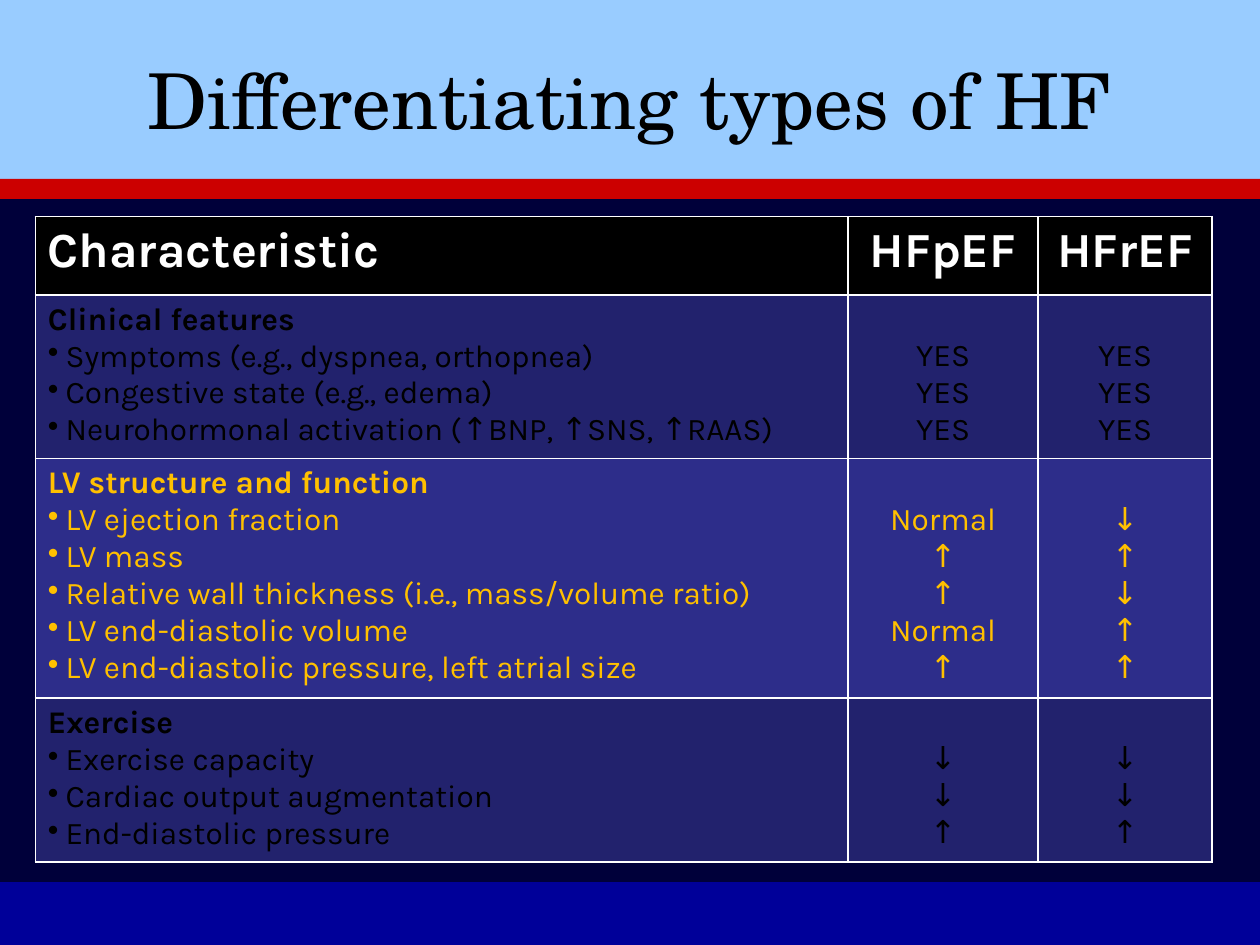
from typing import NamedTuple

from lxml.etree import SubElement
from pptx import Presentation
from pptx.dml.color import RGBColor
from pptx.enum.shapes import MSO_SHAPE as Shape
from pptx.enum.text import MSO_ANCHOR as Anchor, PP_ALIGN as Align
from pptx.oxml.ns import qn
from pptx.util import Inches, Pt

WIDTH, HEIGHT = 10, 7.5
BODY_FONT, TITLE_FONT = "Karla", "TeX Gyre Schola"
BLACK, WHITE, GOLD = "000000", "FFFFFF", "FFC000"
DARK, LIGHT = "22226D", "2D2D8A"
LINE_HEIGHT = 0.29  # one line of 18 pt body text
BULLET_INDENT = 0.14


class Band(NamedTuple):
    top: float
    bottom: float
    fill: str


class Section(NamedTuple):
    heading: str
    rows: list  # (feature, HFpEF, HFrEF)
    color: str
    fill: str
    height: float


BANDS = [
    Band(0, 1.42, "99CCFF"),
    Band(1.42, 1.58, "CC0000"),
    Band(1.58, 7, "00003A"),
]
HEADERS = ["Characteristic", "HFpEF", "HFrEF"]
HEADER_HEIGHT = 0.62
COLUMNS = [6.45, 1.51, 1.38]
SECTIONS = [
    Section("Clinical features", [
        ("Symptoms (e.g., dyspnea, orthopnea)", "YES", "YES"),
        ("Congestive state (e.g., edema)", "YES", "YES"),
        ("Neurohormonal activation (↑BNP, ↑SNS, ↑RAAS)", "YES", "YES"),
    ], BLACK, DARK, 1.3),
    Section("LV structure and function", [
        ("LV ejection fraction", "Normal", "↓"),
        ("LV mass", "↑", "↑"),
        ("Relative wall thickness (i.e., mass/volume ratio)", "↑", "↓"),
        ("LV end-diastolic volume", "Normal", "↑"),
        ("LV end-diastolic pressure, left atrial size", "↑", "↑"),
    ], GOLD, LIGHT, 1.9),
    Section("Exercise", [
        ("Exercise capacity", "↓", "↓"),
        ("Cardiac output augmentation", "↓", "↓"),
        ("End-diastolic pressure", "↑", "↑"),
    ], BLACK, DARK, 1.3),
]


def rgb(color: str) -> RGBColor:
    return RGBColor.from_string(color)


def write(p, text: str, color: str, align=Align.LEFT, **fmt) -> None:
    """Add one formatted run to a paragraph."""
    p.alignment = align
    r = p.add_run()
    r.text = text
    for name, value in fmt.items():
        setattr(r.font, name, value)
    r.font.color.rgb = rgb(color)


def add_bullet(p) -> None:
    pPr = p._p.get_or_add_pPr()
    pPr.set("marL", str(Inches(BULLET_INDENT)))
    pPr.set("indent", str(-Inches(BULLET_INDENT)))
    SubElement(pPr, qn("a:buChar"), char="•")


def style_cell(cell, fill: str) -> None:
    """Give a cell white borders and a solid fill."""
    tcPr = cell._tc.get_or_add_tcPr()
    for side in ("lnL", "lnR", "lnT", "lnB"):
        ln = SubElement(tcPr, qn(f"a:{side}"), w=str(Pt(1)))
        SubElement(SubElement(ln, qn("a:solidFill")), qn("a:srgbClr"), val=WHITE)
    cell.fill.solid()
    cell.fill.fore_color.rgb = rgb(fill)


def fill_cell(cell, lines: list, color: str, align, bullets: bool = False) -> None:
    """Write body lines; with bullets, the first line is a bold heading."""
    tf = cell.text_frame
    for i, line in enumerate(lines):
        p = tf.paragraphs[0] if i == 0 else tf.add_paragraph()
        write(p, line, color, align, name=BODY_FONT, size=Pt(18),
              bold=bullets and i == 0)
        if bullets and i:
            add_bullet(p)


def add_band(slide, band: Band, index: int) -> None:
    sp = slide.shapes.add_shape(Shape.RECTANGLE, 0, Inches(band.top), Inches(WIDTH),
                                Inches(band.bottom - band.top))
    sp.shadow.inherit = False
    sp.fill.solid()
    sp.fill.fore_color.rgb = rgb(band.fill)
    sp.line.fill.background()
    slide.shapes._spTree.insert(2 + index, sp._element)  # behind the title


def add_comparison(slide) -> None:
    heights = [HEADER_HEIGHT] + [s.height for s in SECTIONS]
    table = slide.shapes.add_table(
        len(heights), len(COLUMNS), Inches(0.28), Inches(1.72),
        Inches(sum(COLUMNS)), Inches(sum(heights))).table
    table.horz_banding = False
    for column, width in zip(table.columns, COLUMNS):
        column.width = Inches(width)
    for row, height in zip(table.rows, heights):
        row.height = Inches(height)

    # Header row
    for c, header in enumerate(HEADERS):
        cell = table.cell(0, c)
        style_cell(cell, BLACK)
        write(cell.text_frame.paragraphs[0], header, WHITE,
              Align.CENTER if c else Align.LEFT,
              name=BODY_FONT, size=Pt(28), bold=True)

    # Sections: features on the left, values level with them on the right
    for r, section in enumerate(SECTIONS, start=1):
        features, *values = zip(*section.rows)
        cell = table.cell(r, 0)
        style_cell(cell, section.fill)
        fill_cell(cell, [section.heading, *features], section.color,
                  Align.LEFT, bullets=True)
        for c, lines in enumerate(values, start=1):
            cell = table.cell(r, c)
            style_cell(cell, section.fill)
            cell.margin_top = Inches(0.05 + LINE_HEIGHT)
            fill_cell(cell, lines, section.color, Align.CENTER)


def main() -> None:
    prs = Presentation()
    prs.slide_width, prs.slide_height = Inches(WIDTH), Inches(HEIGHT)
    slide = prs.slides.add_slide(prs.slide_layouts[5])
    slide.background.fill.solid()
    slide.background.fill.fore_color.rgb = rgb("000099")

    # Colour bands
    for i, band in enumerate(BANDS):
        add_band(slide, band, i)

    # Title
    title = slide.shapes.title
    title.left, title.top = 0, Inches(0.16)
    title.width, title.height = Inches(WIDTH), Inches(1.25)
    title.text_frame.vertical_anchor = Anchor.MIDDLE
    write(title.text_frame.paragraphs[0], "Differentiating types of HF", BLACK,
          Align.CENTER, name=TITLE_FONT, size=Pt(44))

    add_comparison(slide)
    prs.save("out.pptx")


if __name__ == "__main__":
    main()
